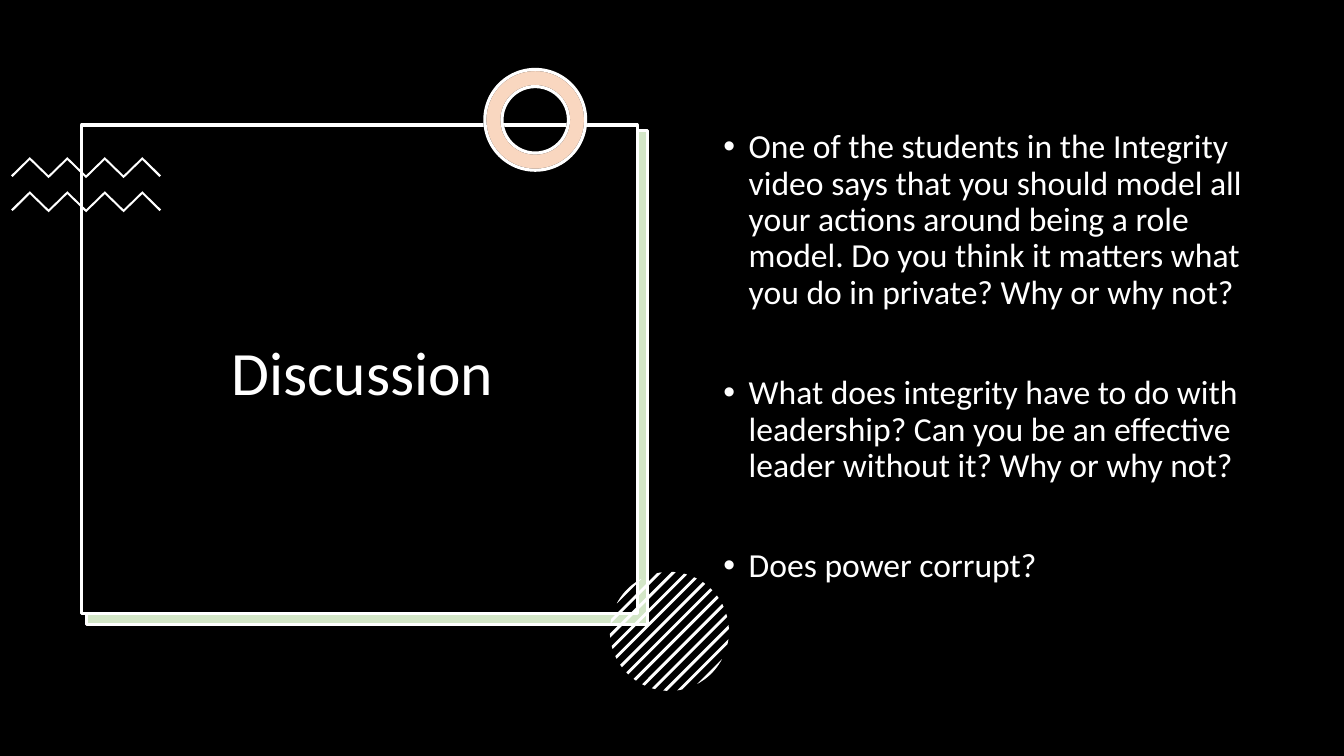
from math import acos, cos, pi, sin

from lxml import etree
from pptx import Presentation
from pptx.dml.color import RGBColor
from pptx.enum.shapes import MSO_SHAPE
from pptx.enum.text import MSO_ANCHOR, MSO_AUTO_SIZE, PP_ALIGN
from pptx.oxml.ns import qn
from pptx.util import Cm, Pt

RECTANGLE, DONUT = MSO_SHAPE.RECTANGLE, MSO_SHAPE.DONUT
MIDDLE, TOP = MSO_ANCHOR.MIDDLE, MSO_ANCHOR.TOP
CENTER, LEFT = PP_ALIGN.CENTER, PP_ALIGN.LEFT
NO_AUTOSIZE = MSO_AUTO_SIZE.NONE
TITLE_ONLY = 5

COLOURS = {"black": "000000", "white": "FFFFFF", "green": "70AD47", "orange": "ED7D31"}
FONT = "Calibri"
QUESTIONS = [
    "One of the students in the Integrity video says that you should model all "
    "your actions around being a role model. Do you think it matters what you do "
    "in private? Why or why not?",
    "What does integrity have to do with leadership? Can you be an effective "
    "leader without it? Why or why not?",
    "Does power corrupt?",
]


def colour(name):
    return RGBColor.from_string(COLOURS[name])


def set_attributes(target, values):
    for name, value in values.items():
        setattr(target, name, value)


def paint(shape, fill, line=None, opacity=100):
    shape.shadow.inherit = False
    shape.fill.solid()
    shape.fill.fore_color.rgb = colour(fill)
    if opacity < 100:
        fill_colour = shape.element.spPr.find(qn("a:solidFill"))[0]
        etree.SubElement(fill_colour, qn("a:alpha"), val=str(opacity * 1000))
    if line:
        shape.line.color.rgb = colour(line)
        shape.line.width = Pt(2.25)
    else:
        shape.line.fill.background()


def add_polygon(shapes, points):
    """Draw a closed white outline through points given in centimetres."""
    corners = [(Cm(x), Cm(y)) for x, y in points]
    builder = shapes.build_freeform(*corners[0])
    builder.add_line_segments(corners[1:], close=True)
    paint(builder.convert_to_shape(), "white")


def format_text(paragraph, size, **layout):
    set_attributes(paragraph, {"line_spacing": 0.9, **layout})
    set_attributes(paragraph.font, {"name": FONT, "size": Pt(size), "bold": False})
    paragraph.font.color.rgb = colour("white")


def add_frame(slide, left, top, width, height):
    """Stack the black panel on its offset pale green backing."""
    layers = [
        (0.1, 0.15, 0.15, 0.13, "white", None, 100),
        (0.12, 0.13, 0.15, 0.13, "green", "white", 30),
        (0, 0, 0, 0, "black", "white", 100),
    ]
    for right, down, wider, taller, fill, line, opacity in layers:
        panel = slide.shapes.add_shape(
            RECTANGLE, Cm(left + right), Cm(top + down), Cm(width + wider), Cm(height + taller)
        )
        paint(panel, fill, line, opacity)


def add_zigzags(slide, left, top, width, height, rows=2, peaks=4):
    group = slide.shapes.add_group_shape()
    step, thickness = width / (2 * peaks), 0.07
    rise = height - thickness
    for row in range(rows):
        row_top = top + row * 0.86
        upper = [
            (left + i * step, row_top + (0 if i % 2 else rise)) for i in range(2 * peaks + 1)
        ]
        lower = [(x, y + thickness) for x, y in upper[1:-1]]
        start = (upper[0][0] + 0.04, upper[0][1] + 0.04)
        end = (upper[-1][0] - 0.04, upper[-1][1] + 0.04)
        add_polygon(group.shapes, upper + [end] + lower[::-1] + [start])


def add_ring(slide, left, top, diameter):
    for fill, line, opacity in (("white", "black", 100), ("orange", "white", 30)):
        ring = slide.shapes.add_shape(DONUT, Cm(left), Cm(top), Cm(diameter), Cm(diameter))
        ring.adjustments[0] = 0.17
        paint(ring, fill, line, opacity)


def add_striped_circle(slide, left, top, diameter, stripes=13):
    """Fill a circle with diagonal stripes whose ends follow its edge."""
    group = slide.shapes.add_group_shape()
    radius = diameter / 2
    pitch, half_stripe, arc_steps = 0.245, 0.036, 6
    for index in range(stripes):
        distance = (index - stripes // 2) * pitch
        inner, outer = (
            acos(max(-1, min(1, (distance + side) / radius)))
            for side in (-half_stripe, half_stripe)
        )
        arc = [inner + (outer - inner) * i / arc_steps for i in range(arc_steps + 1)]
        angles = [pi / 4 + a for a in arc] + [pi / 4 - a for a in reversed(arc)]
        add_polygon(
            group.shapes,
            [(left + radius * (1 + cos(a)), top + radius * (1 + sin(a))) for a in angles],
        )


def add_title(slide, left, top, width, height):
    title = slide.shapes.title
    title.element.getparent().append(title.element)  # in front of the panel
    box = {"left": Cm(left), "top": Cm(top), "width": Cm(width), "height": Cm(height)}
    set_attributes(title, box)
    title.text_frame.text = "Discussion"
    set_attributes(
        title.text_frame,
        {"vertical_anchor": MIDDLE, "word_wrap": True, "auto_size": NO_AUTOSIZE},
    )
    format_text(title.text_frame.paragraphs[0], 44, alignment=CENTER)


def add_questions(slide, left, top, width, height):
    frame = slide.shapes.add_textbox(Cm(left), Cm(top), Cm(width), Cm(height)).text_frame
    set_attributes(
        frame, {"word_wrap": True, "vertical_anchor": TOP, "auto_size": NO_AUTOSIZE}
    )
    frame.text = "\n".join(QUESTIONS)
    indent = Cm(0.64)
    for index, paragraph in enumerate(frame.paragraphs):
        format_text(paragraph, 24, alignment=LEFT, space_before=Pt(46 if index else 0))
        properties = paragraph._p.get_or_add_pPr()
        properties.set("marL", str(indent))
        properties.set("indent", str(-indent))
        bullet_font = etree.Element(qn("a:buFont"), typeface="Arial")
        bullet = etree.Element(qn("a:buChar"), char="•")
        text_defaults = properties.find(qn("a:defRPr"))
        text_defaults.addprevious(bullet_font)
        text_defaults.addprevious(bullet)
        for run in paragraph.runs:
            set_attributes(run.font, {"name": FONT, "size": Pt(24)})
            run.font.color.rgb = colour("white")


def build_discussion_slide(presentation):
    slide = presentation.slides.add_slide(presentation.slide_layouts[TITLE_ONLY])
    slide.background.fill.solid()
    slide.background.fill.fore_color.rgb = colour("black")
    add_frame(slide, 2.06, 3.15, 14, 12.32)
    add_zigzags(slide, 0.28, 3.96, 3.78, 0.53)
    add_ring(slide, 12.22, 1.75, 2.54)
    add_striped_circle(slide, 15.37, 14.41, 3)
    add_title(slide, 2.34, 3.86, 13.61, 11.23)
    add_questions(slide, 17.98, 3.15, 13.82, 12.09)


def main():
    presentation = Presentation()
    set_attributes(presentation, {"slide_width": Cm(33.87), "slide_height": Cm(19.05)})
    build_discussion_slide(presentation)
    presentation.save("out.pptx")


if __name__ == "__main__":
    main()
